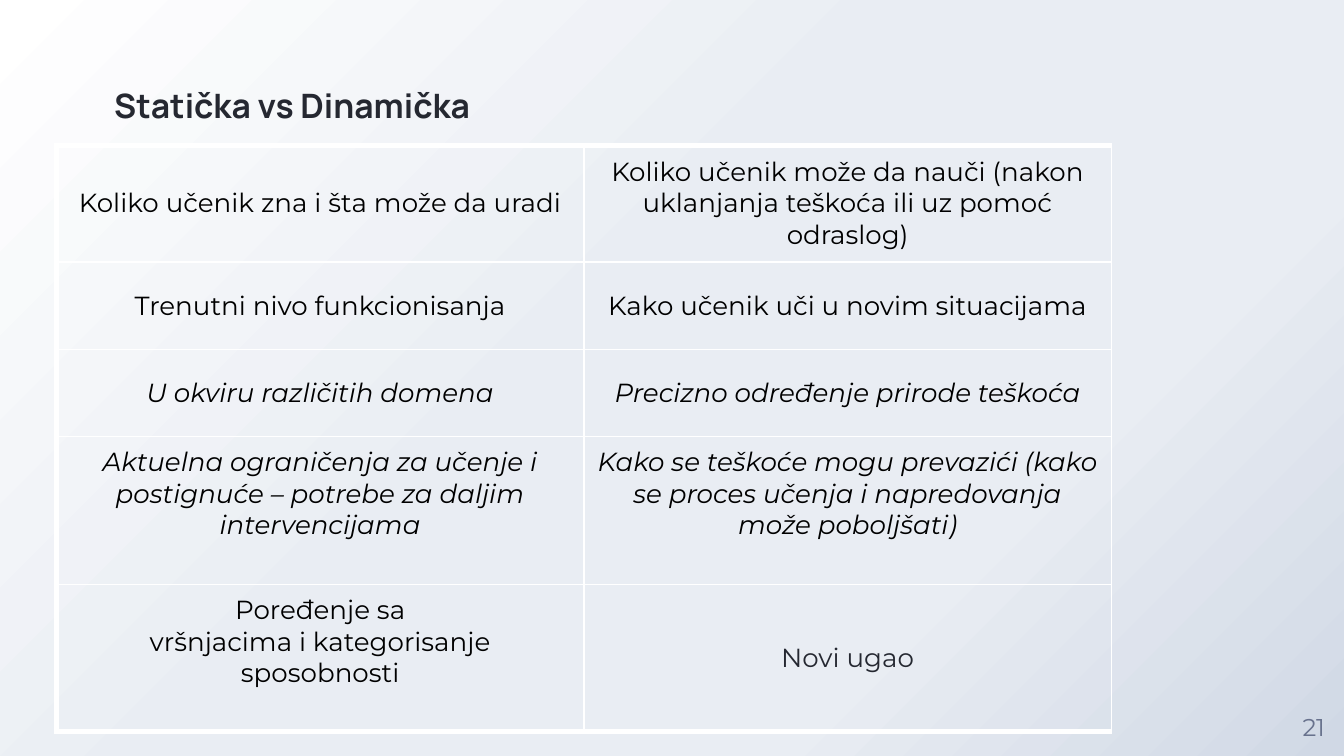
from dataclasses import dataclass

from lxml import etree
from pptx import Presentation
from pptx.dml.color import RGBColor
from pptx.enum import text
from pptx.oxml import ns
from pptx.util import Inches, Pt


@dataclass(frozen=True)
class Theme:
    heading_font: str = "Manrope"
    body_font: str = "Montserrat"
    ink: str = "252831"
    body: str = "000000"
    muted: str = "68728D"
    border: str = "FFFFFF"
    gradient: tuple = ((0, "FFFFFF"), (44, "E9EDF3"), (72, "E9EDF3"), (100, "D0D8E5"))
    title_size: int = 18
    body_size: int = 14
    number_size: int = 13
    thick: float = 3
    thin: float = 0.75


THEME = Theme()
MIDDLE, TOP = text.MSO_ANCHOR.MIDDLE, text.MSO_ANCHOR.TOP

TABLE_WIDTH = 7.85
# Height, italic, then (text, anchor) for the static and the dynamic column
ROWS = (
    (0.87, False,
     ("Koliko učenik zna i šta može da uradi", MIDDLE),
     ("Koliko učenik može da nauči (nakon uklanjanja teškoća ili uz pomoć odraslog)", MIDDLE)),
    (0.65, False,
     ("Trenutni nivo funkcionisanja", MIDDLE),
     ("Kako učenik uči u novim situacijama", MIDDLE)),
    (0.65, True,
     ("U okviru različitih domena", MIDDLE),
     ("Precizno određenje prirode teškoća", MIDDLE)),
    (1.1, True,
     ("Aktuelna ograničenja za učenje i postignuće – potrebe za daljim intervencijama", TOP),
     ("Kako se teškoće mogu prevazići (kako se proces učenja i napredovanja može poboljšati)", TOP)),
    (1.09, False,
     ("Poređenje sa\nvršnjacima i kategorisanje sposobnosti", TOP),
     ("Novi ugao", MIDDLE)),
)


def add_element(parent, tag, **attributes):
    element = etree.SubElement(parent, ns.qn(tag))
    for name, value in attributes.items():
        element.set(name, str(value))
    return element


def set_background(slide):
    """Radial gradient that spreads from the top left corner."""
    slide.background.fill.solid()
    properties = slide.background.fill._xPr
    properties.remove(properties.find(ns.qn("a:solidFill")))
    gradient = etree.Element(ns.qn("a:gradFill"), rotWithShape="1")
    properties.insert(0, gradient)
    stops = add_element(gradient, "a:gsLst")
    for position, color in THEME.gradient:
        stop = add_element(stops, "a:gs", pos=position * 1000)
        add_element(stop, "a:srgbClr", val=color)
    circle = add_element(gradient, "a:path", path="circle")
    add_element(circle, "a:fillToRect", r=100000, b=100000)


def style_paragraph(paragraph, font, size, color, bold=False, italic=False):
    paragraph.font.name = font
    paragraph.font.size = Pt(size)
    paragraph.font.bold = bold
    paragraph.font.italic = italic
    paragraph.font.color.rgb = RGBColor.from_string(color)


def add_label(slide, words, box, anchor, alignment, **style):
    frame = slide.shapes.add_textbox(*map(Inches, box)).text_frame
    frame.word_wrap = True
    frame.vertical_anchor = anchor
    frame.margin_left = frame.margin_right = frame.margin_top = frame.margin_bottom = 0
    paragraph = frame.paragraphs[0]
    paragraph.text = words
    paragraph.alignment = alignment
    style_paragraph(paragraph, **style)


def set_borders(cell, widths):
    """Draw the borders; widths are in the order left, right, top, bottom."""
    properties = cell._tc.get_or_add_tcPr()
    for index, (side, width) in enumerate(zip("LRTB", widths)):
        line = etree.Element(ns.qn(f"a:ln{side}"), w=str(Pt(width)))
        fill = add_element(line, "a:solidFill")
        add_element(fill, "a:srgbClr", val=THEME.border)
        properties.insert(index, line)


def fill_cell(cell, words, anchor, color, italic):
    cell.text = words
    cell.vertical_anchor = anchor
    cell.margin_left = cell.margin_right = Inches(0.1)
    cell.margin_top = cell.margin_bottom = Inches(0.07)
    cell.fill.background()
    for paragraph in cell.text_frame.paragraphs:
        paragraph.alignment = text.PP_ALIGN.CENTER
        style_paragraph(paragraph, THEME.body_font, THEME.body_size, color, italic=italic)


def add_comparison(slide):
    height = sum(row[0] for row in ROWS)
    box = map(Inches, (0.42, 1.08, TABLE_WIDTH, height))
    table = slide.shapes.add_table(len(ROWS), 2, *box).table
    table.first_row = table.horz_banding = False
    last = len(ROWS) - 1
    for i, (row_height, italic, *entries) in enumerate(ROWS):
        table.rows[i].height = Inches(row_height)
        for j, (words, anchor) in enumerate(entries):
            cell = table.cell(i, j)
            color = THEME.ink if (i, j) == (last, 1) else THEME.body
            fill_cell(cell, words, anchor, color, italic)
            outer = (j == 0, False, i == 0, i == last)
            set_borders(cell, [THEME.thick if edge else THEME.thin for edge in outer])


def main():
    presentation = Presentation()
    presentation.slide_width = Inches(10)
    presentation.slide_height = Inches(10) * 9 // 16
    slide = presentation.slides.add_slide(presentation.slide_layouts[6])
    set_background(slide)
    add_label(slide, "Statička vs Dinamička", (0.85, -0.01, 3.92, 0.94),
              text.MSO_ANCHOR.BOTTOM, text.PP_ALIGN.LEFT,
              font=THEME.heading_font, size=THEME.title_size, color=THEME.ink, bold=True)
    add_comparison(slide)
    add_label(slide, "21", (9.55, 5.18, 0.45, 0.45), MIDDLE, text.PP_ALIGN.CENTER,
              font=THEME.body_font, size=THEME.number_size, color=THEME.muted)
    presentation.save("out.pptx")


if __name__ == "__main__":
    main()
